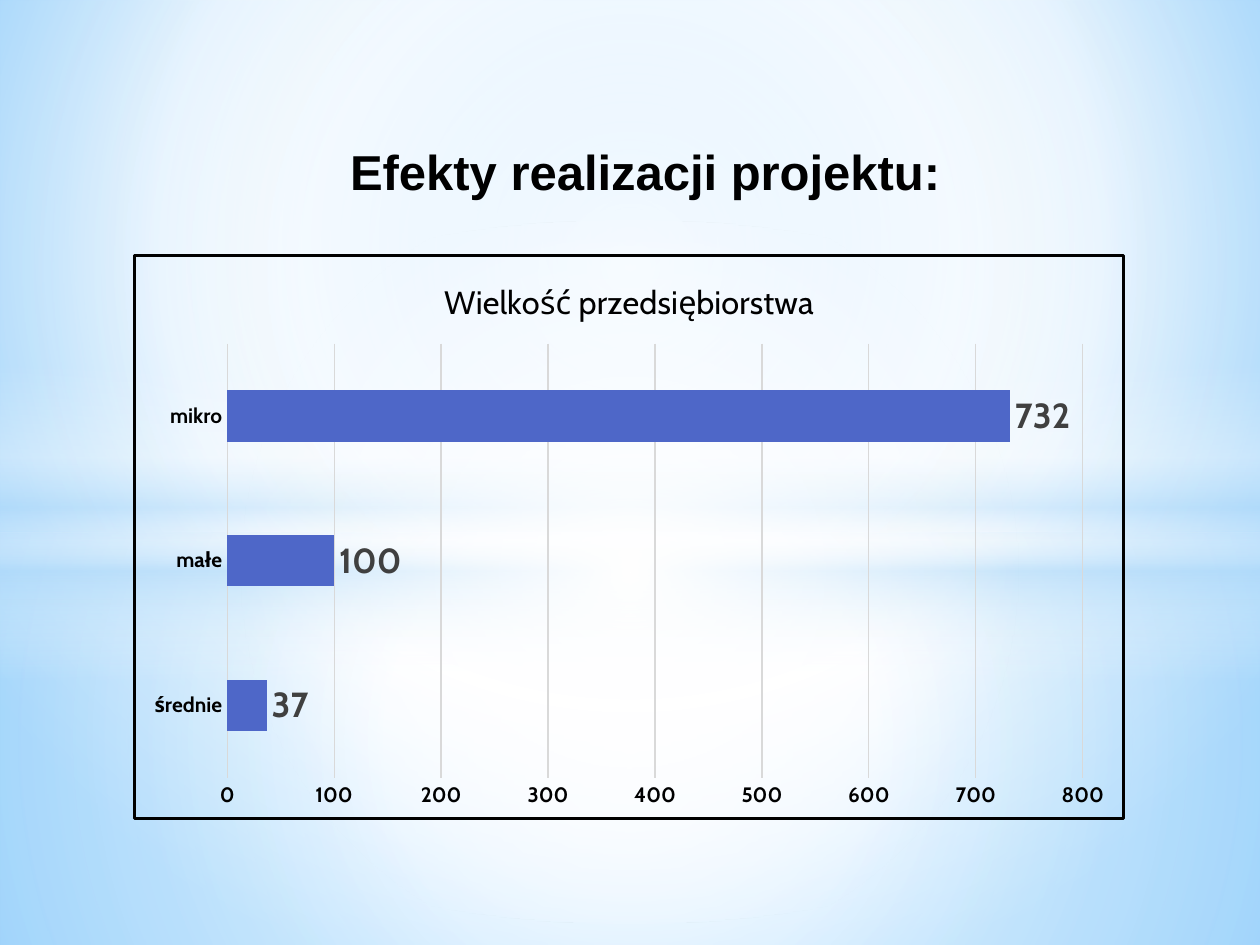
from lxml import etree
from pptx import Presentation
from pptx.chart.data import CategoryChartData
from pptx.dml.color import RGBColor
from pptx.enum.chart import XL_CHART_TYPE as Chart, XL_LABEL_POSITION as Pos, XL_TICK_MARK as Tick
from pptx.enum.shapes import MSO_SHAPE as Shape
from pptx.enum.text import MSO_ANCHOR as Anchor, PP_ALIGN as Align
from pptx.oxml import parse_xml
from pptx.oxml.ns import nsdecls, qn
from pptx.util import Cm, Pt

CENTER = (50, 50, 50, 50)
HEADING = "Wielkość przedsiębiorstwa"


def color(value):
    return RGBColor.from_string(value)


def set_font(font, size, value="000000", bold=False, name="Cabin"):
    font.name = name
    font.size = Pt(size)
    font.bold = bold
    font.color.rgb = color(value)


def set_line(line, value, width):
    line.color.rgb = color(value)
    line.width = Pt(width)


def set_gradient(parent, stops, focus=None):
    grad = etree.Element(qn("a:gradFill"), rotWithShape="1")
    stop_list = etree.SubElement(grad, qn("a:gsLst"))
    for place, value, alpha in stops:
        stop = etree.SubElement(stop_list, qn("a:gs"), pos=str(place * 1000))
        clr = etree.SubElement(stop, qn("a:srgbClr"), val=value)
        if alpha < 100:
            etree.SubElement(clr, qn("a:alpha"), val=str(alpha * 1000))
    if focus:
        shade = etree.SubElement(grad, qn("a:path"), path="circle")
        sides = {side: str(v * 1000) for side, v in zip("ltrb", focus)}
        etree.SubElement(shade, qn("a:fillToRect"), **sides)
    else:
        etree.SubElement(grad, qn("a:lin"), ang="5400000", scaled="0")
    solid = parent.find(qn("a:solidFill"))
    parent.replace(solid, grad)


def set_background(s):
    s.background.fill.solid()
    bg = next(s.element.iter(qn("p:bgPr")))
    stops = [(0, "9ED5FF", 100), (60, "FFFFFF", 100), (100, "5BB9FF", 100)]
    set_gradient(bg, stops, (20, 10, 20, 60))


def add_glow(s, kind, top, height, stops, focus=CENTER):
    sp = s.shapes.add_shape(kind, 0, Cm(top), Cm(25.4), Cm(height))
    sp.shadow.inherit = False
    sp.line.fill.background()
    sp.fill.solid()
    set_gradient(sp.element.spPr, stops, focus)


def add_title(s, text):
    sp = s.shapes.title
    sp.left, sp.top, sp.width, sp.height = Cm(1.5), Cm(1.93), Cm(23.01), Cm(2.24)
    s.shapes.element.append(sp.element)
    tf = sp.text_frame
    tf.word_wrap = True
    tf.vertical_anchor = Anchor.BOTTOM
    p = tf.paragraphs[0]
    p.alignment = Align.CENTER
    r = p.add_run()
    r.text = text
    set_font(r.font, 28, bold=True, name="Arial")


def set_border(chart, value, width):
    border = parse_xml(
        f'<c:spPr {nsdecls("c", "a")}><a:noFill/><a:ln w="{Pt(width)}">'
        f'<a:solidFill><a:srgbClr val="{value}"/></a:solidFill></a:ln></c:spPr>')
    chart.element.find(qn("c:chart")).addnext(border)


def format_axes(chart):
    cat, val = chart.category_axis, chart.value_axis
    for axis in (cat, val):
        axis.major_tick_mark = axis.minor_tick_mark = Tick.NONE
        set_font(axis.tick_labels.font, 12, bold=True)
    set_line(cat.format.line, "D9D9D9", 0.75)
    val.format.line.fill.background()
    val.has_major_gridlines = True
    set_line(val.major_gridlines.format.line, "D9D9D9", 0.75)
    val.minimum_scale, val.maximum_scale, val.major_unit = 0, 800, 100


def add_bar_chart(s, categories, values):
    data = CategoryChartData()
    data.categories = categories
    data.add_series(HEADING, values)
    chart = s.shapes.add_chart(
        Chart.BAR_CLUSTERED, Cm(2.69), Cm(5.13), Cm(19.99), Cm(11.4), data).chart
    set_font(chart.font, 10)
    set_border(chart, "000000", 1.5)
    chart.has_legend = False
    chart.has_title = True
    r = chart.chart_title.text_frame.paragraphs[0].add_run()
    r.text = HEADING
    set_font(r.font, 18.6)
    chart.chart_title.include_in_layout = False
    format_axes(chart)
    plot = chart.plots[0]
    plot.gap_width = 182
    plot.vary_by_categories = False
    series = plot.series[0]
    series.format.fill.solid()
    series.format.fill.fore_color.rgb = color("4E67C8")
    labels = series.data_labels
    labels.show_value = True
    labels.position = Pos.OUTSIDE_END
    set_font(labels.font, 20, "404040", bold=True)


def main():
    prs = Presentation()
    prs.slide_width, prs.slide_height = Cm(25.4), Cm(19.05)
    s = prs.slides.add_slide(prs.slide_layouts[5])
    set_background(s)
    add_glow(s, Shape.RECTANGLE, 10.74, 8.31,
             [(0, "FFFFFF", 91), (37, "FFFFFF", 76), (100, "B4DCFA", 79)])
    add_glow(s, Shape.RECTANGLE, 0, 10.74,
             [(0, "FFFFFF", 89), (48, "FFFFFF", 62), (100, "B4DCFA", 79)])
    add_glow(s, Shape.RECTANGLE, 7.37, 6.35,
             [(0, "FFFFFF", 0), (29, "FFFFFF", 30), (45, "B4DCFA", 40),
              (55, "FFFFFF", 26), (65, "B4DCFA", 60), (100, "FFFFFF", 0)], None)
    add_glow(s, Shape.OVAL, 4.45, 14.17, [(0, "FFFFFF", 100), (54, "FFFFFF", 0)])
    add_title(s, "Efekty realizacji projektu:")
    add_bar_chart(s, ["średnie", "małe", "mikro"], [37, 100, 732])
    prs.save("out.pptx")


if __name__ == "__main__":
    main()
